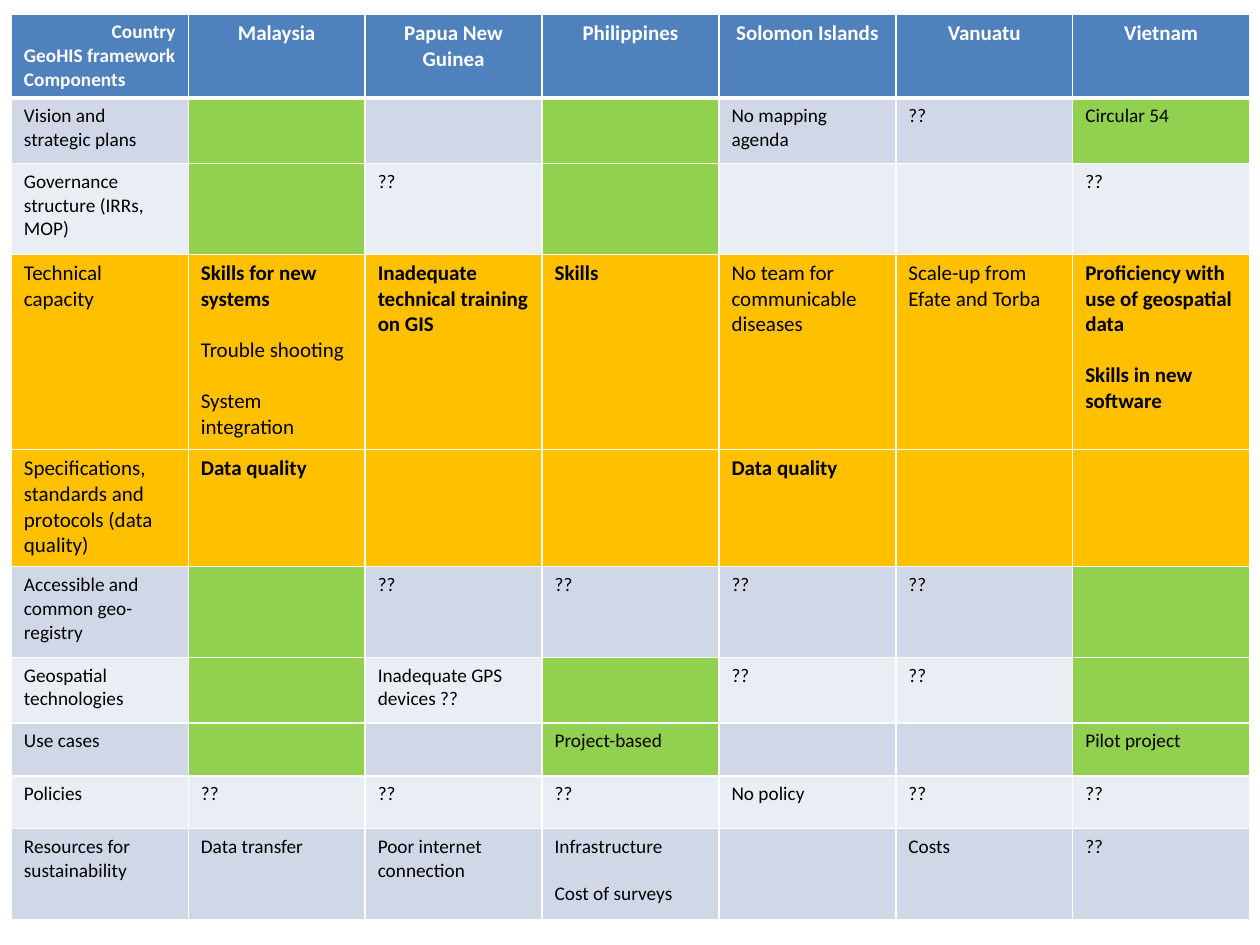
"""Build a slide with a grid of GeoHIS framework needs by country."""
import dataclasses
import typing

import lxml.etree
import pptx
import pptx.dml.color
import pptx.enum.text
import pptx.oxml.ns
import pptx.util

WIDE, HIGH = 10, 7.5
LEFT, TOP = 0.01 * WIDE - 0.01, 0.015 * HIGH
COL = 0.983 * WIDE / 7
FONT = "Calibri"
LINE = 1.22
HUES = {
    "head": "4F81BD", "dark": "D0D8E8", "light": "E9EDF4",
    "done": "92D050", "gap": "FFC000", "white": "FFFFFF", "black": "000000",
}
ALIGN = pptx.enum.text.PP_ALIGN


@dataclasses.dataclass
class Row:
    high: float
    base: str
    texts: typing.List[str]
    green: typing.Tuple[int, ...] = ()
    size: int = 11


HEADS = ["Malaysia", "Papua New Guinea", "Philippines", "Solomon Islands",
         "Vanuatu", "Vietnam"]
ROWS = [
    Row(0.52, "head", ["Country|GeoHIS framework|Components"] + HEADS, size=12),
    Row(0.52, "dark", ["Vision and strategic plans", "", "", "",
                       "No mapping agenda", "??", "Circular 54"], (1, 3, 6)),
    Row(0.72, "light", ["Governance structure (IRRs, MOP)", "", "??", "", "", "",
                        "??"], (1, 3)),
    Row(1.55, "gap", ["Technical capacity",
                      "*Skills for new systems|Trouble shooting|System integration",
                      "*Inadequate technical training on GIS", "*Skills",
                      "No team for communicable diseases",
                      "Scale-up from Efate and Torba",
                      "*Proficiency with use of geospatial data|*Skills in new software"],
        size=12),
    Row(0.93, "gap", ["Specifications, standards and protocols (data quality)",
                      "*Data quality", "", "", "*Data quality", "", ""], size=12),
    Row(0.72, "dark", ["Accessible and common geo-registry", "", "??", "??", "??",
                       "??", ""], (1, 6)),
    Row(0.52, "light", ["Geospatial technologies", "", "Inadequate GPS devices ??",
                        "", "??", "??", ""], (1, 3, 6)),
    Row(0.42, "dark", ["Use cases", "", "", "Project-based", "", "",
                       "Pilot project"], (1, 3, 6)),
    Row(0.42, "light", ["Policies", "??", "??", "??", "No policy", "??", "??"]),
    Row(0.72, "dark", ["Resources for sustainability", "Data transfer",
                       "Poor internet connection", "Infrastructure|Cost of surveys",
                       "", "Costs", "??"]),
]


def shade(name: str) -> pptx.dml.color.RGBColor:
    return pptx.dml.color.RGBColor.from_string(HUES[name])


def edge(cell: typing.Any, side: str, width: float) -> None:
    tag = pptx.oxml.ns.qn
    props = cell._tc.get_or_add_tcPr()
    line = lxml.etree.SubElement(props, tag("a:ln" + side),
                                 w=str(pptx.util.Pt(width)))
    fill = lxml.etree.SubElement(line, tag("a:solidFill"))
    lxml.etree.SubElement(fill, tag("a:srgbClr"), val=HUES["white"])


def write(cell: typing.Any, row: Row, first: bool) -> None:
    head = row.base == "head"
    size = 11 if first and head else row.size
    frame = cell.text_frame
    frame.word_wrap = True
    for spot, text in enumerate(cell_text for cell_text in row.texts_now):
        para = frame.add_paragraph() if spot else frame.paragraphs[0]
        if head:
            para.alignment = (ALIGN.CENTER if not first
                              else ALIGN.LEFT if spot else ALIGN.RIGHT)
        elif spot:
            para.space_before = pptx.util.Pt(round(size * LINE, 1))
        run = para.add_run()
        run.text = text.lstrip("*")
        run.font.name = FONT
        run.font.size = pptx.util.Pt(size)
        run.font.bold = head or text.startswith("*")
        run.font.color.rgb = shade("white" if head else "black")


def draw(table: typing.Any, down: int, row: Row) -> None:
    table.rows[down].height = pptx.util.Inches(row.high)
    for over, text in enumerate(row.texts):
        cell = table.cell(down, over)
        for side in "LRTB":
            thick = (down, side) in ((0, "B"), (1, "T"))
            edge(cell, side, 3 if thick else 1)
        cell.fill.solid()
        cell.fill.fore_color.rgb = shade("done" if over in row.green else row.base)
        if text:
            row.texts_now = text.split("|")
            write(cell, row, over == 0)


def main() -> None:
    deck = pptx.Presentation()
    deck.slide_width = pptx.util.Inches(WIDE)
    deck.slide_height = pptx.util.Inches(HIGH)
    slide = deck.slides.add_slide(deck.slide_layouts[6])
    box = [pptx.util.Inches(part) for part in
           (LEFT, TOP, COL * 7, sum(row.high for row in ROWS))]
    table = slide.shapes.add_table(len(ROWS), 7, *box).table
    table.horz_banding = False
    for col in table.columns:
        col.width = pptx.util.Inches(COL)
    for down, row in enumerate(ROWS):
        draw(table, down, row)
    deck.save("out.pptx")


if __name__ == "__main__":
    main()
